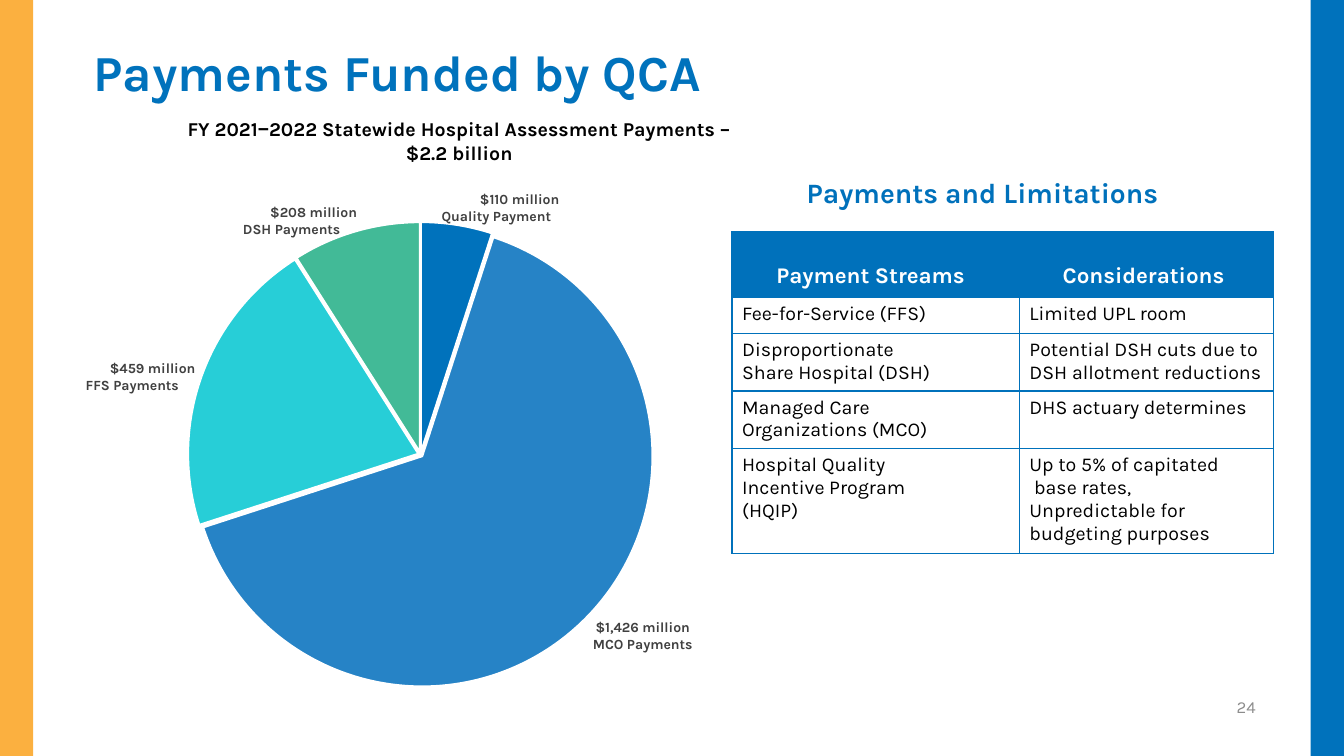
from lxml.etree import SubElement
from pptx import Presentation
from pptx.chart.data import CategoryChartData
from pptx.dml.color import RGBColor
from pptx.enum.chart import XL_CHART_TYPE
from pptx.enum.shapes import MSO_SHAPE
from pptx.enum.text import MSO_ANCHOR, PP_ALIGN
from pptx.oxml import parse_xml
from pptx.oxml.ns import nsdecls, qn
from pptx.util import Pt

PX = 9144  # 100 px to the inch
COLORS = {
    "blue": "0072BC", "table": "0071BB", "amber": "FBB040", "mid": "2683C6",
    "aqua": "27CED7", "green": "42BA97", "black": "000000", "dark": "404040",
    "gray": "8C8C8C", "white": "FFFFFF",
}
STYLES = {
    "title": {"size": Pt(36), "bold": True, "color": "blue"},
    "heading": {"size": Pt(20), "bold": True, "color": "table"},
    "chart_title": {"size": Pt(14), "bold": True, "color": "black"},
    "label": {"size": Pt(10), "bold": True, "color": "dark"},
    "number": {"size": Pt(12), "bold": False, "color": "gray"},
    "table_head": {"size": Pt(16), "bold": True, "color": "white"},
    "table_body": {"size": Pt(14), "bold": False, "color": "black"},
}


def rgb(name):
    return RGBColor.from_string(COLORS[name])


class SlideBuilder:
    font_name = "Karla"

    def __init__(self, deck):
        self.slide = deck.slides.add_slide(deck.slide_layouts[5])
        self.shapes = self.slide.shapes

    def format_font(self, font, style):
        font.name = self.font_name
        for key, value in STYLES[style].items():
            if key == "color":
                font.color.rgb = rgb(value)
            else:
                setattr(font, key, value)

    def fill_frame(self, frame, text, style, align=PP_ALIGN.LEFT, indent=0,
                   anchor=MSO_ANCHOR.TOP):
        frame.word_wrap = True
        frame.vertical_anchor = anchor
        for side in ("left", "right", "top", "bottom"):
            setattr(frame, f"margin_{side}", PX if side == "top" else 0)
        frame.text = text
        for para in frame.paragraphs:
            para.alignment = align
            if indent:
                para._p.get_or_add_pPr().set("indent", str(indent * PX))
            for span in para.runs:
                self.format_font(span.font, style)

    def title(self, bounds, text):
        box = self.shapes.title
        box.left, box.top, box.width, box.height = (n * PX for n in bounds)
        self.fill_frame(box.text_frame, text, "title")

    def text(self, bounds, text, style, **layout):
        box = self.shapes.add_textbox(*(n * PX for n in bounds))
        self.fill_frame(box.text_frame, text, style, **layout)

    def bar(self, bounds, color):
        shape = self.shapes.add_shape(MSO_SHAPE.RECTANGLE, *(n * PX for n in bounds))
        shape.shadow.inherit = False
        shape.fill.solid()
        shape.fill.fore_color.rgb = rgb(color)
        shape.line.fill.background()

    def pie(self, bounds, values, colors, plot_area):
        data = CategoryChartData()
        data.categories = [str(n + 1) for n in range(len(values))]
        data.add_series("Series 1", values)
        chart = self.shapes.add_chart(
            XL_CHART_TYPE.PIE, *(n * PX for n in bounds), data).chart
        chart.has_legend = chart.has_title = False
        self.format_font(chart.font, "label")
        chart.plots[0].vary_by_categories = True
        series = chart.plots[0].series[0]
        for index, color in enumerate(colors):
            wedge = series.points[index].format
            wedge.fill.solid()
            wedge.fill.fore_color.rgb = rgb(color)
            wedge.line.color.rgb = rgb("white")
            wedge.line.width = Pt(1.5)
        for point in series._element.findall(qn("c:dPt")):
            point.find(qn("c:spPr")).addprevious(
                parse_xml(f'<c:explosion {nsdecls("c")} val="1"/>'))
        self.place_plot(chart, plot_area)

    def place_plot(self, chart, fractions):
        """Fix the inner plot area as fractions of the chart frame."""
        area = chart._chartSpace.find(".//" + qn("c:plotArea"))
        for old in area.findall(qn("c:layout")):
            area.remove(old)
        layout = parse_xml(f'<c:layout {nsdecls("c")}><c:manualLayout/></c:layout>')
        settings = [("layoutTarget", "inner"), ("xMode", "edge"), ("yMode", "edge")]
        settings += zip("xywh", fractions)
        for tag, value in settings:
            SubElement(layout[0], qn(f"c:{tag}")).set("val", str(value))
        area.insert(0, layout)

    def table(self, left, top, widths, heights, rows, head_indents):
        table = self.shapes.add_table(
            len(heights), len(widths), left * PX, top * PX,
            sum(widths) * PX, sum(heights) * PX).table
        table.horz_banding = table.first_row = False
        for column, width in zip(table.columns, widths):
            column.width = width * PX
        for row_index, (height, texts) in enumerate(zip(heights, rows)):
            table.rows[row_index].height = height * PX
            for column_index, text in enumerate(texts):
                cell = table.cell(row_index, column_index)
                head = row_index == 0
                self.fill_frame(cell.text_frame, text,
                                "table_head" if head else "table_body")
                margins = {"left": head_indents[column_index] if head else 10,
                           "right": 0, "top": 5, "bottom": 8 if head else 0}
                for side, margin in margins.items():
                    setattr(cell, f"margin_{side}", margin * PX)
                cell.vertical_anchor = MSO_ANCHOR.BOTTOM if head else MSO_ANCHOR.TOP
                if head:
                    cell.fill.solid()
                    cell.fill.fore_color.rgb = rgb("table")
                else:
                    cell.fill.background()
                self.border(cell)

    def border(self, cell):
        for index, side in enumerate("LRTB"):
            cell._tc.get_or_add_tcPr().insert(index, parse_xml(
                f'<a:ln{side} {nsdecls("a")} w="{Pt(1)}"><a:solidFill>'
                f'<a:srgbClr val="{COLORS["table"]}"/></a:solidFill></a:ln{side}>'))


def main():
    deck = Presentation()
    deck.slide_width, deck.slide_height = 1333 * PX, 750 * PX
    page = SlideBuilder(deck)
    page.bar((1300, 0, 33, 750), "blue")
    page.bar((0, 0, 33, 750), "amber")
    page.pie((92, 200, 667, 488), (5, 65, 21, 9),
             ("blue", "mid", "aqua", "green"), (0.145, 0.046, 0.685, 0.937))
    page.title((93, 40, 1150, 62), "Payments Funded by QCA")
    page.text((1208, 681, 56, 40), "24", "number",
              align=PP_ALIGN.CENTER, anchor=MSO_ANCHOR.MIDDLE)
    for bounds, indent, label in (
            ((85, 356, 113, 35), 24, "$459 million\vFFS Payments"),
            ((241, 201, 121, 35), 27, "$208 million\vDSH Payments"),
            ((438, 188, 138, 35), 38, "$110 million\vQuality Payment")):
        page.text(bounds, label, "label", indent=indent)
    page.text((576, 613, 123, 36), "$1,426 million\nMCO Payments", "label",
              align=PP_ALIGN.CENTER)
    page.text((102, 115, 707, 50),
              "FY 2021‒2022 Statewide Hospital Assessment Payments –\n$2.2 billion",
              "chart_title", align=PP_ALIGN.CENTER)
    page.table(726, 230, (285, 252), (65, 36, 57, 57, 104), (
        ("Payment Streams", "Considerations"),
        ("Fee-for-Service (FFS)", "Limited UPL room"),
        ("Disproportionate\vShare Hospital (DSH)",
         "Potential DSH cuts due to\vDSH allotment reductions"),
        ("Managed Care\vOrganizations (MCO)", "DHS actuary determines"),
        ("Hospital Quality\vIncentive Program\v(HQIP)",
         "Up to 5% of capitated\v base rates,\vUnpredictable for\vbudgeting purposes"),
    ), head_indents=(44, 43))
    page.text((800, 173, 391, 35), "Payments and Limitations", "heading")
    deck.save("out.pptx")


if __name__ == "__main__":
    main()
